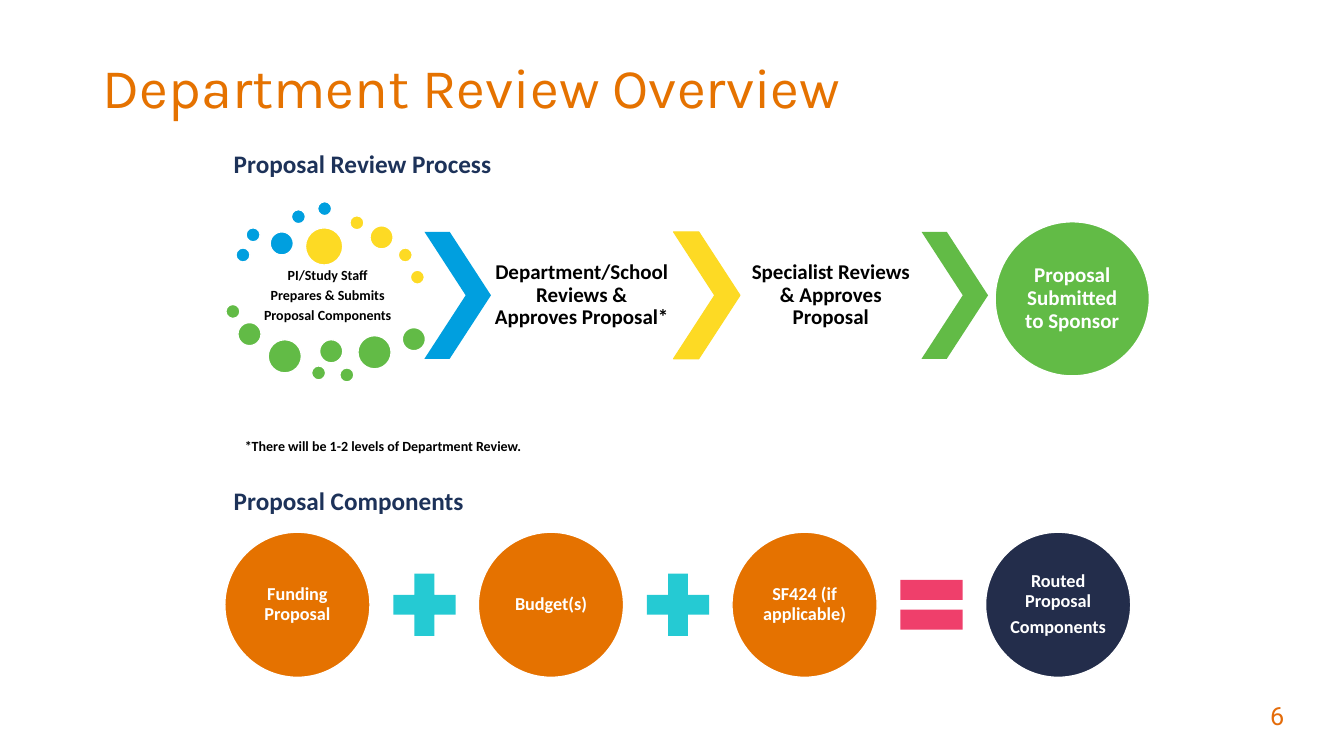
from pptx import Presentation
from pptx.dml.color import RGBColor
from pptx.enum import shapes, text
from pptx.util import Inches, Pt

COLORS = {
    "orange": "E57200", "number": "E46C0A", "navy": "232D4B",
    "heading": "1D3259", "teal": "25CAD3", "pink": "EF3F6B",
    "blue": "009FDF", "yellow": "FDDA24", "green": "62BB46",
    "white": "FFFFFF", "black": "000000",
}
SHAPE = shapes.MSO_SHAPE

SMALL, MEDIUM, LARGE = 0.14, 0.23, 0.33
DOTS = {
    "blue": [(2.34, 2.46, SMALL), (2.44, 2.26, SMALL), (2.68, 2.3, MEDIUM),
             (2.89, 2.08, SMALL), (3.15, 2, SMALL)],
    "yellow": [(3.47, 2.14, SMALL), (3.67, 2.24, MEDIUM), (3.95, 2.46, SMALL),
               (4.07, 2.68, SMALL), (3.03, 2.26, 0.37)],
    "green": [(2.24, 3.02, SMALL), (2.36, 3.2, MEDIUM), (2.66, 3.37, LARGE),
              (3.09, 3.63, SMALL), (3.17, 3.37, MEDIUM), (3.37, 3.65, SMALL),
              (3.55, 3.33, LARGE), (3.99, 3.25, MEDIUM)],
}
COMPONENTS = [
    (["Funding Proposal"], "orange"),
    (["Budget(s)"], "orange"),
    (["SF424 (if applicable)"], "orange"),
    (["Routed Proposal", "Components"], "navy"),
]
OPERATORS = [
    (SHAPE.MATH_PLUS, "teal"), (SHAPE.MATH_PLUS, "teal"),
    (SHAPE.MATH_EQUAL, "pink"),
]


def rgb(name):
    return RGBColor.from_string(COLORS[name])


def format_runs(para, size, color, font="Calibri", bold=True):
    for span in para.runs:
        span.font.name = font
        span.font.size = Pt(size)
        span.font.bold = bold
        span.font.color.rgb = rgb(color)


def fill_centered(box, lines, size, color, inset):
    frame = box.text_frame
    frame.word_wrap = True
    frame.vertical_anchor = text.MSO_ANCHOR.MIDDLE
    frame.margin_left = frame.margin_right = Inches(inset)
    frame.margin_top = frame.margin_bottom = Inches(inset)
    frame.text = "\n".join(lines)
    for para in frame.paragraphs:
        para.alignment = text.PP_ALIGN.CENTER
        para.line_spacing = 0.9
        para.space_after = Pt(0.35 * size)
        format_runs(para, size, color)


def add_box(page, left, top, width, height):
    return page.shapes.add_textbox(
        Inches(left), Inches(top), Inches(width), Inches(height))


def add_step(page, lines, size, inset, *place):
    fill_centered(add_box(page, *place), lines, size, "black", inset)


def add_label(page, words, size, color, *place, font="Calibri", bold=True, wrap=True):
    frame = add_box(page, *place).text_frame
    frame.word_wrap = wrap
    frame.text = words
    format_runs(frame.paragraphs[0], size, color, font, bold)


def add_figure(page, kind, color, left, top, width, height, outline=None, weight=1):
    figure = page.shapes.add_shape(
        kind, Inches(left), Inches(top), Inches(width), Inches(height))
    figure.shadow.inherit = False
    figure.fill.solid()
    figure.fill.fore_color.rgb = rgb(color)
    if outline:
        figure.line.color.rgb = rgb(outline)
        figure.line.width = Pt(weight)
    else:
        figure.line.fill.background()
    return figure


def add_circle(page, color, left, top, size):
    return add_figure(page, SHAPE.OVAL, color, left, top, size, size, "white")


def add_chevron(page, color, left, outline=None):
    chevron = add_figure(
        page, SHAPE.CHEVRON, color, left, 2.3, 0.66, 1.26, outline, 0.75)
    chevron.adjustments[0] = 0.62


def add_title(page, words):
    title = page.shapes.title
    title.left, title.top = Inches(0.92), Inches(0.4)
    title.width, title.height = Inches(11.5), Inches(1)
    frame = title.text_frame
    frame.text = words
    frame.auto_size = text.MSO_AUTO_SIZE.NONE
    frame.vertical_anchor = text.MSO_ANCHOR.MIDDLE
    para = frame.paragraphs[0]
    para.alignment = text.PP_ALIGN.LEFT
    para.line_spacing = 0.9
    format_runs(para, 40, "orange", "Karla", False)


def add_review_process(page):
    add_step(page, ["PI/Study Staff", "Prepares & Submits", "Proposal Components"],
             10, 0.01, 2.35, 2.64, 1.8, 0.59)
    for color, dots in DOTS.items():
        for dot in dots:
            add_circle(page, color, *dot)
    add_chevron(page, "blue", 4.21)
    add_step(page, ["Department/School Reviews & Approves Proposal*"],
             15, 0.02, 4.87, 2.3, 1.8, 1.26)
    add_chevron(page, "yellow", 6.68, "yellow")
    add_step(page, ["Specialist Reviews & Approves Proposal"],
             15, 0.02, 7.34, 2.3, 1.8, 1.26)
    add_chevron(page, "green", 9.14)
    sponsor = add_circle(page, "green", 9.87, 2.2, 1.53)
    fill_centered(sponsor, ["Proposal Submitted to Sponsor"], 15, "white", 0)


def add_components(page):
    pitch = 2.515
    for index, (lines, color) in enumerate(COMPONENTS):
        circle = add_circle(page, color, 2.23 + index * pitch, 5.28, 1.44)
        fill_centered(circle, lines, 13, "white", 0.02)
    for index, (kind, color) in enumerate(OPERATORS):
        add_figure(page, kind, color, 3.79 + index * pitch, 5.58, 0.84, 0.84)


def main():
    deck = Presentation()
    deck.slide_width, deck.slide_height = Inches(13.33), Inches(7.5)
    page = deck.slides.add_slide(deck.slide_layouts[5])
    add_title(page, "Department Review Overview")
    add_label(page, "Proposal Review Process", 18, "heading", 2.22, 1.42, 6.33, 0.4)
    add_review_process(page)
    add_label(page, "*There will be 1-2 levels of Department Review.",
              10, "black", 2.33, 4.29, 7.69, 0.27)
    add_label(page, "Proposal Components", 18, "heading", 2.22, 4.77, 6.33, 0.4)
    add_components(page)
    add_label(page, "6", 18, "number", 12.5, 6.9, 0.51, 0.4,
              font="Roboto", bold=False, wrap=False)
    deck.save("out.pptx")


if __name__ == "__main__":
    main()
